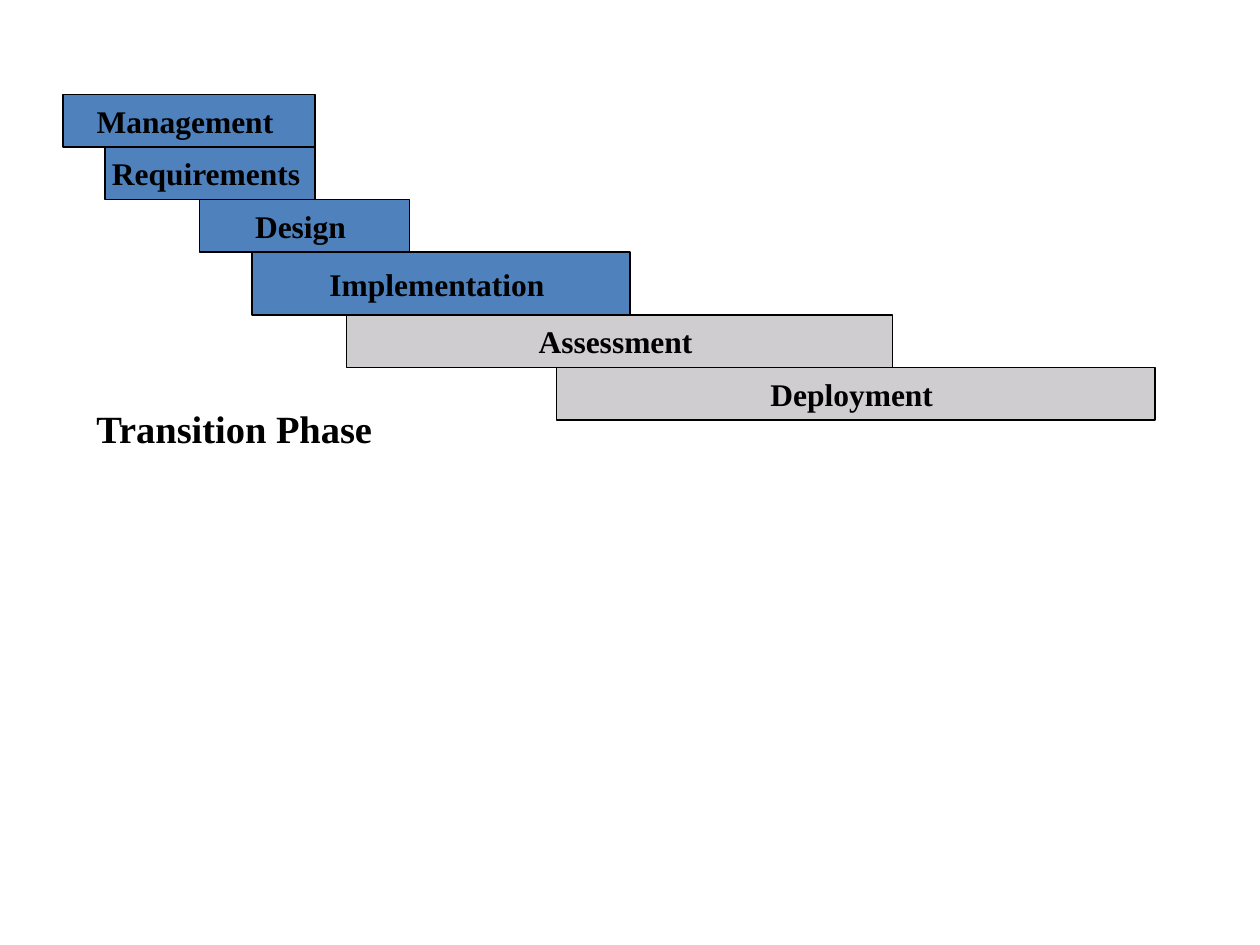
from pptx import Presentation
from pptx.dml.color import RGBColor
from pptx.enum.shapes import MSO_SHAPE
from pptx.enum.text import MSO_ANCHOR, MSO_AUTO_SIZE, PP_ALIGN
from pptx.util import Inches, Pt

BLUE, GREY, BLACK = "4F81BD", "D0CDD1", "000000"


def color(value):
    return RGBColor.from_string(value)


class PhaseSlide:
    """Holds the text style and a page measured in twelfths of an inch."""

    font_style = {"name": "Times New Roman", "bold": True}

    def __init__(self, deck):
        self.page = deck.slides.add_slide(deck.slide_layouts[6])

    def place(self, *cells):
        return [Inches(cell / 12) for cell in cells]

    def label(self, shape, text, size, align, frame_format):
        frame = shape.text_frame
        for name, value in frame_format.items():
            setattr(frame, name, value)
        para = frame.paragraphs[0]
        para.alignment = align
        span = para.add_run()
        span.text = text
        for name, value in {**self.font_style, "size": Pt(size)}.items():
            setattr(span.font, name, value)
        span.font.color.rgb = color(BLACK)

    def bar(self, text, column, row, columns, rows, fill):
        box = self.page.shapes.add_shape(
            MSO_SHAPE.RECTANGLE, *self.place(column, row, columns, rows))
        box.shadow.inherit = False
        box.fill.solid()
        box.fill.fore_color.rgb = color(fill)
        box.line.color.rgb = color(BLACK)
        box.line.width = Pt(0.75)
        self.label(box, text, 18, PP_ALIGN.CENTER,
                   {"word_wrap": False, "vertical_anchor": MSO_ANCHOR.MIDDLE})

    def caption(self, text, column, row, columns, rows):
        box = self.page.shapes.add_textbox(*self.place(column, row, columns, rows))
        self.label(box, text, 22, PP_ALIGN.LEFT,
                   {"word_wrap": True, "auto_size": MSO_AUTO_SIZE.SHAPE_TO_FIT_TEXT})


def main():
    deck = Presentation()
    deck.slide_width, deck.slide_height = Inches(10), Inches(7.5)
    slide = PhaseSlide(deck)

    # Workflow bars: label, first column, columns, rows, fill
    bars = [
        ("Management ", 6, 24, 5, BLUE),
        ("Requirements ", 10, 20, 5, BLUE),
        ("Design ", 19, 20, 5, BLUE),
        ("Implementation ", 24, 36, 6, BLUE),
        ("Assessment ", 33, 52, 5, GREY),
        ("Deployment ", 53, 57, 5, GREY),
    ]
    # Each bar starts where the one above it ends
    row = 9
    for text, column, columns, rows, fill in bars:
        slide.bar(text, column, row, columns, rows, fill)
        row += rows

    # Phase name
    slide.caption("Transition Phase", 8, 38, 32, 5.6)

    deck.save("out.pptx")


if __name__ == "__main__":
    main()
